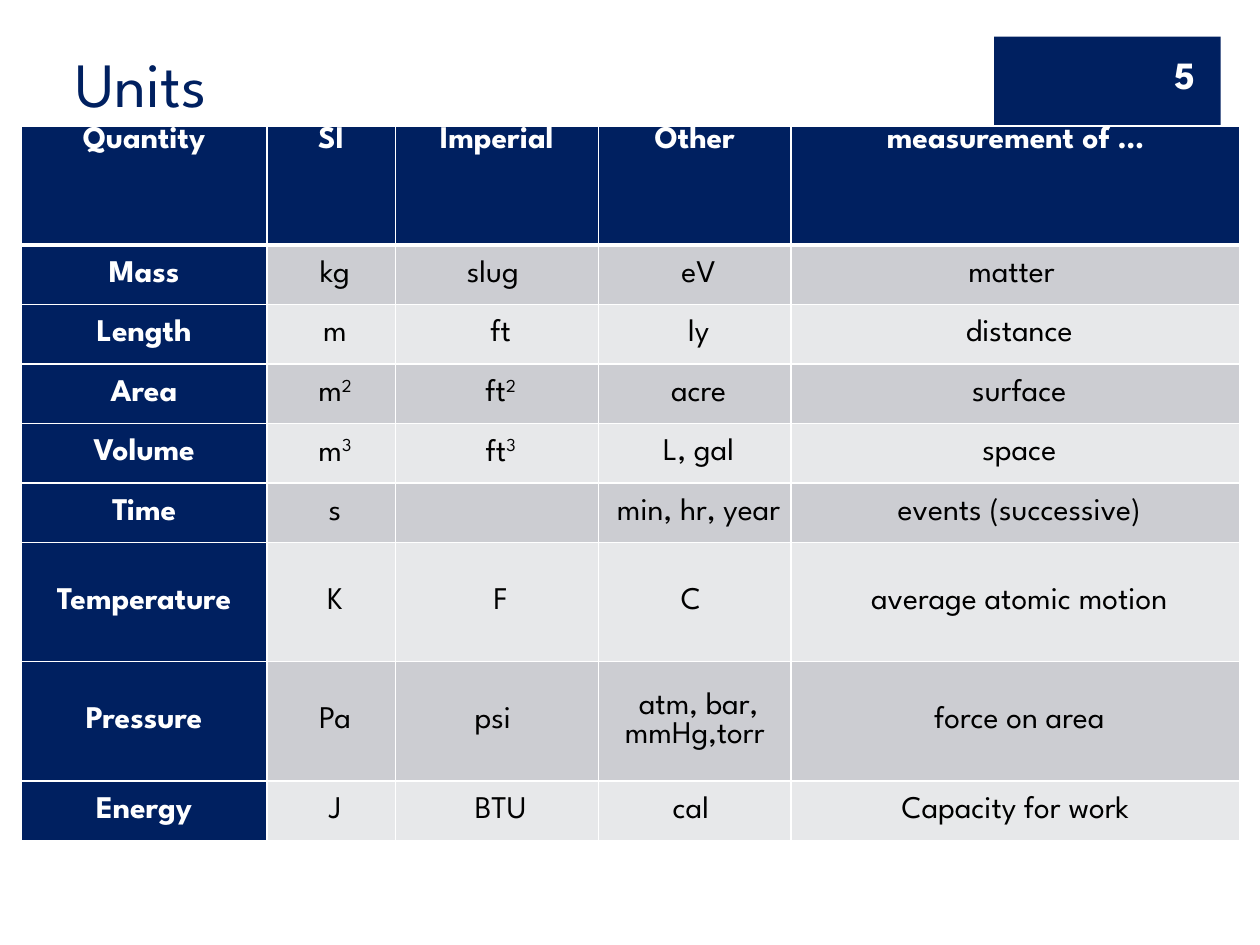
from lxml.etree import SubElement
from pptx import Presentation
from pptx.dml.color import RGBColor
from pptx.enum.shapes import MSO_SHAPE
from pptx.enum.text import MSO_ANCHOR, PP_ALIGN
from pptx.oxml.ns import qn
from pptx.util import Cm, Pt

NAVY, WHITE, BLACK = "002060", "FFFFFF", "000000"
BANDS = ["CCCDD2", "E7E8EA"]


def color(value):
    return RGBColor.from_string(value)


def style(paragraph, size, text_color, bold=False, align=PP_ALIGN.LEFT):
    paragraph.alignment = align
    paragraph.font.name = "League Spartan"
    paragraph.font.size = Pt(size)
    paragraph.font.bold = bold
    paragraph.font.color.rgb = color(text_color)


prs = Presentation()
prs.slide_width, prs.slide_height = Cm(25.4), Cm(19.05)
slide = prs.slides.add_slide(prs.slide_layouts[6])

# Corner block behind the page number
corner = slide.shapes.add_shape(MSO_SHAPE.RECTANGLE, Cm(20.04), Cm(0.74), Cm(4.57), Cm(4.57))
corner.shadow.inherit = False
corner.fill.solid()
corner.fill.fore_color.rgb = color(NAVY)
corner.line.fill.background()

# Title
title = slide.shapes.add_textbox(Cm(1.27), Cm(0.64), Cm(18.08), Cm(1.9)).text_frame
title.word_wrap = True
title.vertical_anchor = MSO_ANCHOR.BOTTOM
title.text = "Units"
style(title.paragraphs[0], 36, NAVY)

# Page number
number = slide.shapes.add_textbox(Cm(22.94), Cm(0.99), Cm(1.4), Cm(1.02)).text_frame
number.word_wrap = True
number.vertical_anchor = MSO_ANCHOR.MIDDLE
number.text = "5"
style(number.paragraphs[0], 22, WHITE, True, PP_ALIGN.RIGHT)

# Units table: ^ starts a superscript
units = [
    ["Quantity", "SI", "Imperial", "Other", "measurement of …"],
    ["Mass", " kg", "slug ", " eV", "matter "],
    ["Length", " m", " ft", " ly", " distance"],
    ["Area", " m^2", " ft^2", " acre", " surface"],
    ["Volume", " m^3", " ft^3", " L, gal", " space"],
    ["Time", " s", "", " min, hr, year", " events (successive)"],
    ["Temperature", " K", " F", "C ", " average atomic motion"],
    ["Pressure", " Pa", "psi ", " atm, bar, mmHg,torr", " force on area"],
    ["Energy", " J", " BTU", "cal ", "Capacity for work"],
]
column_widths = [4.95, 2.59, 4.09, 3.89, 9.04]
row_height = 1.2
tall_rows = {"Quantity", "Temperature", "Pressure"}

table = slide.shapes.add_table(
    len(units), len(column_widths), Cm(0.43), Cm(2.54),
    Cm(sum(column_widths)), Cm(row_height * (len(units) + len(tall_rows)))
).table
for column, width in zip(table.columns, column_widths):
    column.width = Cm(width)

for r, row in enumerate(units):
    table.rows[r].height = Cm(row_height * (2 if row[0] in tall_rows else 1))
    for c, entry in enumerate(row):
        cell = table.cell(r, c)
        heading = r == 0 or c == 0
        cell.margin_left = cell.margin_right = Cm(0.18)
        cell.margin_top = cell.margin_bottom = 0
        cell.vertical_anchor = MSO_ANCHOR.TOP if r == 0 else MSO_ANCHOR.MIDDLE

        # White borders, heavier under the header row
        thick_side = {0: "lnB", 1: "lnT"}.get(r)
        for side in ("lnL", "lnR", "lnT", "lnB"):
            border = SubElement(cell._tc.get_or_add_tcPr(), qn(f"a:{side}"),
                                w=str(Pt(3 if side == thick_side else 1)))
            SubElement(SubElement(border, qn("a:solidFill")), qn("a:srgbClr"), val=WHITE)
        cell.fill.solid()
        cell.fill.fore_color.rgb = color(NAVY if heading else BANDS[(r - 1) % 2])

        # Cell text
        paragraph = cell.text_frame.paragraphs[0]
        style(paragraph, 18, WHITE if heading else BLACK, heading, PP_ALIGN.CENTER)
        base, _, power = entry.partition("^")
        if base:
            paragraph.add_run().text = base
        if power:
            exponent = paragraph.add_run()
            exponent.text = power
            exponent._r.get_or_add_rPr().set("baseline", "30000")

prs.save("out.pptx")
